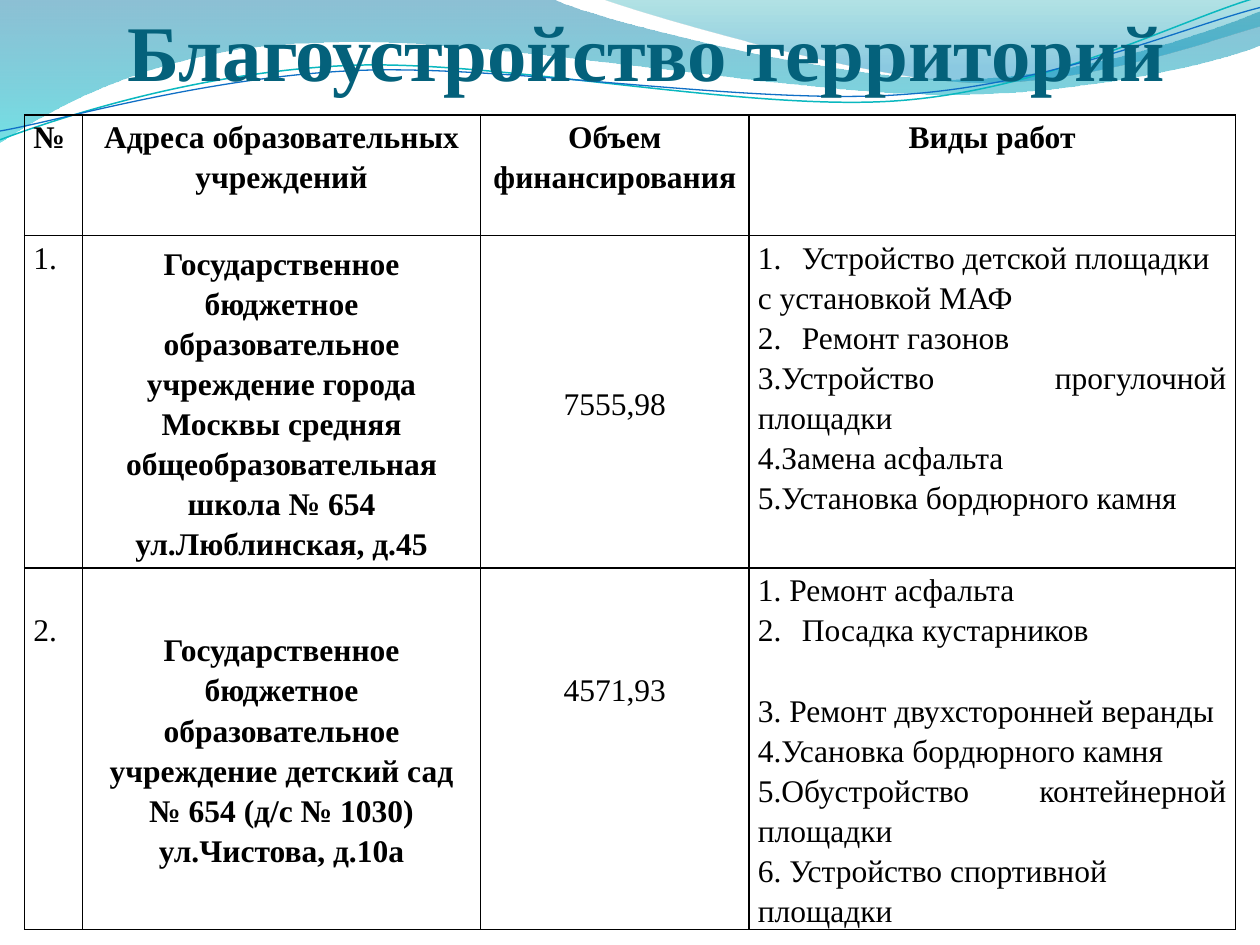
from collections import namedtuple

from lxml import etree
from pptx import Presentation
from pptx.dml.color import RGBColor
from pptx.enum.text import MSO_ANCHOR, MSO_AUTO_SIZE, PP_ALIGN
from pptx.oxml.ns import qn
from pptx.util import Inches, Pt

LEFT, CENTER, JUSTIFY = PP_ALIGN.LEFT, PP_ALIGN.CENTER, PP_ALIGN.JUSTIFY
TOP, MIDDLE, BOTTOM = MSO_ANCHOR.TOP, MSO_ANCHOR.MIDDLE, MSO_ANCHOR.BOTTOM
NO_FIT = MSO_AUTO_SIZE.NONE

Box = namedtuple("Box", "x y w h")
W, H = 10, 7.5
THEME = {
    "font": "Times New Roman", "title_size": 45, "body_size": 18,
    "title": "04617B", "text": "000000", "border": "000000", "border_width": 1,
    "spacing": 1.15, "line_height": 0.32, "number_tab": 0.35,
    "wave_wide": [(0, "0074A1", 45), (1, "00C6CF", 55)],
    "wave_right": [(0, "00A1A9", 30), (0.8, "008BBF", 45)],
    "stroke_teal": ("0AB8BF", 0.85), "stroke_blue": ("0F6FC6", 0.75),
}

WAVE_WIDE = [
    (0, 0), (4.4, 0),
    (4.76, 0.17, 6.64, 0.63, 7.58, 0.63), (8.53, 0.63, 9.58, 0.26, 10, 0.09),
    (10, 0.36),
    (9.83, 0.44, 8.7, 0.76, 7.46, 0.75), (6.22, 0.75, 3.82, 0.28, 2.57, 0.34),
    (1.29, 0.36, 0.46, 0.83, 0, 1.13),
]
WAVE_RIGHT = [
    (4.79, 0), (5.09, 0.11, 6.82, 0.62, 7.69, 0.65),
    (8.56, 0.69, 9.61, 0.32, 10, 0.21), (10, 0),
]
STROKE_TEAL = [
    (0, 1.11), (0.48, 0.93, 1.58, 0.57, 2.77, 0.52),
    (3.95, 0.47, 5.93, 0.89, 7.13, 0.8), (8.33, 0.71, 9.38, 0.15, 9.98, -0.02),
]
STROKE_BLUE = [
    (0, 1.04), (0.47, 0.96, 1.64, 0.61, 2.83, 0.56),
    (4.03, 0.51, 5.97, 0.84, 7.17, 0.75), (8.36, 0.67, 9.41, 0.21, 10, 0.06),
]

COLUMNS = [0.46, 3.16, 2.13, 3.86]
ROWS = [0.96, 2.64, 2.86]
HEADERS = ["№", "Адреса образовательных учреждений",
           "Объем финансирования", "Виды работ"]
RECORDS = [
    ("1.",
     ["Государственное бюджетное образовательное учреждение города Москвы "
      "средняя общеобразовательная школа № 654\vул.Люблинская, д.45"],
     "7555,98",
     [("1.\tУстройство детской площадки с установкой МАФ", LEFT, 0),
      ("2.\tРемонт газонов", LEFT, 0),
      ("3.Устройство прогулочной площадки", JUSTIFY, 0),
      ("4.Замена асфальта", JUSTIFY, 0),
      ("5.Установка бордюрного камня", JUSTIFY, 0)],
     0, 0),
    ("2.",
     ["Государственное бюджетное образовательное учреждение детский сад "
      "№ 654 (д/с № 1030)", "ул.Чистова, д.10а"],
     "4571,93",
     [("1. Ремонт асфальта", LEFT, 0),
      ("2.\tПосадка кустарников", LEFT, 1),
      ("3. Ремонт двухсторонней веранды", JUSTIFY, 0),
      ("4.Усановка бордюрного камня", JUSTIFY, 0),
      ("5.Обустройство контейнерной площадки", JUSTIFY, 0),
      ("6. Устройство спортивной площадки", LEFT, 0)],
     1, 3),
]


def rgb(value):
    return RGBColor.from_string(value)


def put_text(p, text, size=THEME["body_size"], color=THEME["text"], bold=False,
             align=LEFT, spacing=THEME["spacing"], after=0):
    p.alignment, p.line_spacing = align, spacing
    p.space_before, p.space_after = Pt(0), Inches(after)
    if "\t" in text:
        tabs = etree.SubElement(p._p.get_or_add_pPr(), qn("a:tabLst"))
        etree.SubElement(tabs, qn("a:tab"), algn="l",
                         pos=str(Inches(THEME["number_tab"])))
    for i, part in enumerate(text.split("\v")):
        if i:
            p.add_line_break()
        r = p.add_run()
        r.text = part
        r.font.name, r.font.size, r.font.bold = THEME["font"], Pt(size), bold
        r.font.color.rgb = rgb(color)


def add_curve(s, box, path, closed):
    scale = box.w / W
    nodes = [[(Inches(box.x + x * scale), Inches(box.y + y * scale))
              for x, y in zip(seg[::2], seg[1::2])] for seg in path]
    builder = s.shapes.build_freeform(*nodes[0][0], scale=1.0)
    builder.add_line_segments([seg[-1] for seg in nodes[1:]], close=closed)
    sp = builder.convert_to_shape()
    sp.shadow.inherit = False
    lines = list(sp._element.iter(qn("a:lnTo")))
    for line, seg in zip(lines, nodes[1:]):
        if len(seg) == 1:
            continue
        curve = etree.Element(qn("a:cubicBezTo"))
        for x, y in seg:
            etree.SubElement(curve, qn("a:pt"), x=str(x - sp.left),
                             y=str(y - sp.top))
        line.getparent().replace(line, curve)
    return sp


def add_waves(s, box):
    for path, key in ((WAVE_WIDE, "wave_wide"), (WAVE_RIGHT, "wave_right")):
        sp = add_curve(s, box, path, True)
        sp.line.fill.background()
        sp.fill.gradient()
        sp.fill.gradient_angle = 270
        for stop, (pos, color, alpha) in zip(sp.fill.gradient_stops, THEME[key]):
            stop.position = pos
            stop.color.rgb = rgb(color)
            etree.SubElement(stop._gs[0], qn("a:alpha"), val=str(alpha * 1000))
    for path, key in ((STROKE_TEAL, "stroke_teal"), (STROKE_BLUE, "stroke_blue")):
        sp = add_curve(s, box, path, False)
        sp.fill.background()
        color, width = THEME[key]
        sp.line.color.rgb, sp.line.width = rgb(color), Pt(width)


def add_title(s, box, text):
    sp = s.shapes.title
    s.shapes._spTree.append(sp._element)
    sp.left, sp.top, sp.width, sp.height = (Inches(v) for v in box)
    tf = sp.text_frame
    tf.auto_size, tf.word_wrap, tf.vertical_anchor = NO_FIT, True, BOTTOM
    tf.margin_left = tf.margin_right = tf.margin_bottom = 0
    tf.margin_top = Inches(0.05)
    put_text(tf.paragraphs[0], text, size=THEME["title_size"],
             color=THEME["title"], bold=True, align=CENTER, spacing=1.0)


def set_borders(cell):
    tcPr = cell._tc.get_or_add_tcPr()
    for i, side in enumerate(("lnL", "lnR", "lnT", "lnB")):
        ln = etree.Element(qn("a:" + side), w=str(Pt(THEME["border_width"])))
        fill = etree.SubElement(ln, qn("a:solidFill"))
        etree.SubElement(fill, qn("a:srgbClr"), val=THEME["border"])
        tcPr.insert(i, ln)


def fill_cell(cell, items, anchor=TOP, lines_above=0, lines_below=0, **fmt):
    line = THEME["line_height"]
    cell.margin_left = cell.margin_right = Inches(0.07)
    cell.margin_top = Inches(lines_above * line)
    cell.margin_bottom = Inches(lines_below * line)
    cell.vertical_anchor = anchor
    cell.fill.background()
    set_borders(cell)
    tf = cell.text_frame
    for i, (text, align, gap) in enumerate(items):
        p = tf.add_paragraph() if i else tf.paragraphs[0]
        put_text(p, text, align=align, after=gap * line, **fmt)


def add_works_table(s, box):
    frame = s.shapes.add_table(len(ROWS), len(COLUMNS), *(Inches(v) for v in box))
    table = frame.table
    table.first_row = table.horz_banding = False
    for col, share in zip(table.columns, COLUMNS):
        col.width = Inches(box.w * share / sum(COLUMNS))
    for row, share in zip(table.rows, ROWS):
        row.height = Inches(box.h * share / sum(ROWS))
    for c, text in enumerate(HEADERS):
        fill_cell(table.cell(0, c), [(text, CENTER if c else JUSTIFY, 0)], bold=True)
    for r, (number, address, amount, works, above, below) in enumerate(RECORDS, 1):
        fill_cell(table.cell(r, 0), [(number, JUSTIFY, 0)], lines_above=above)
        fill_cell(table.cell(r, 1), [(text, CENTER, 0) for text in address],
                  anchor=MIDDLE, bold=True)
        fill_cell(table.cell(r, 2), [(amount, CENTER, 0)], anchor=MIDDLE,
                  lines_below=below)
        fill_cell(table.cell(r, 3), works)


def main():
    prs = Presentation()
    prs.slide_width, prs.slide_height = Inches(W), Inches(H)
    s = prs.slides.add_slide(prs.slide_layouts[5])
    add_waves(s, Box(0, 0, W, H))
    add_title(s, Box(0.0745 * W, 0.0395 * H, 0.877 * W, 0.063 * H),
              "Благоустройство территорий")
    add_works_table(s, Box(0.0195 * W, 0.1215 * H, 0.961 * W, 0.861 * H))
    prs.save("out.pptx")


if __name__ == "__main__":
    main()
